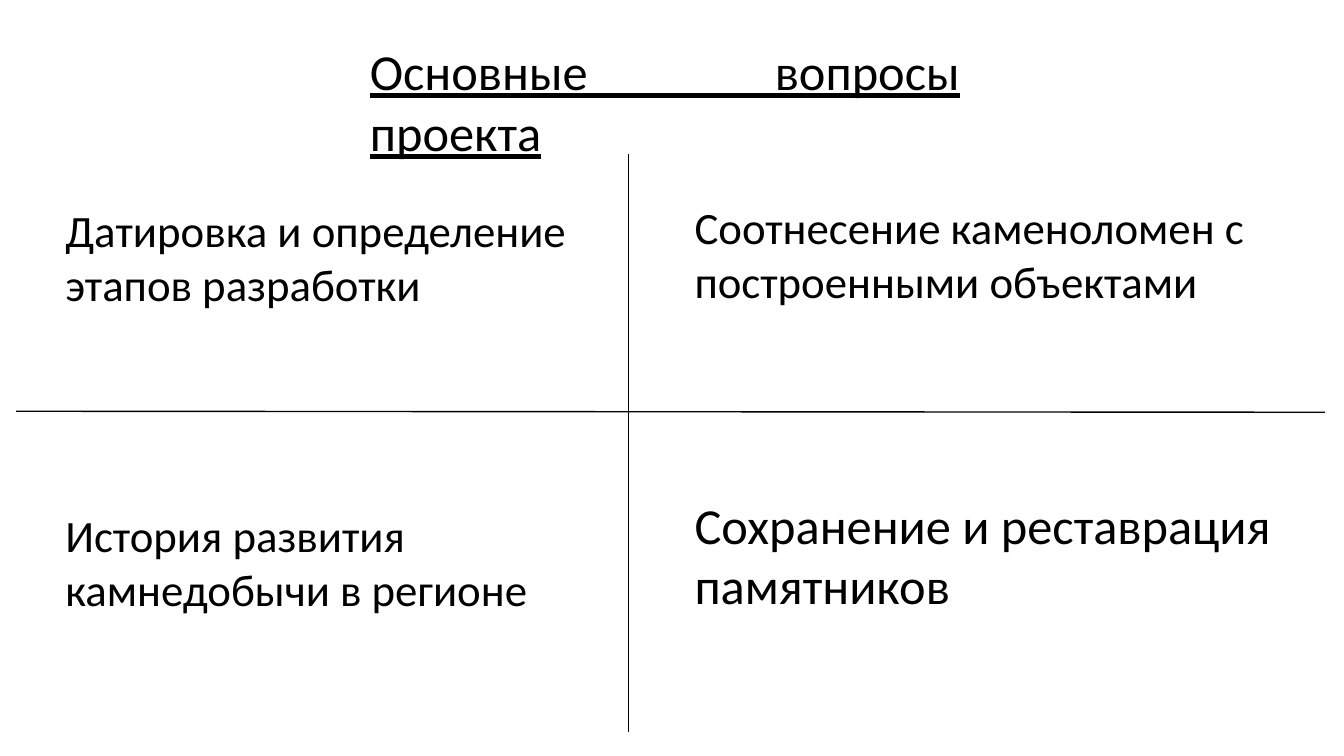
from dataclasses import dataclass

from lxml.etree import SubElement
from pptx import Presentation
from pptx.dml.color import RGBColor
from pptx.enum.shapes import MSO_CONNECTOR
from pptx.enum.text import MSO_AUTO_SIZE, PP_ALIGN
from pptx.oxml.ns import qn
from pptx.util import Inches, Pt


@dataclass(frozen=True)
class Theme:
    font: str = "Calibri"
    ink: RGBColor = RGBColor(0, 0, 0)
    large: int = 36
    normal: int = 32


theme = Theme()


def add_text(slide, text, left, top, width, height, size):
    box = slide.shapes.add_textbox(Inches(left), Inches(top), Inches(width), Inches(height))
    text_frame = box.text_frame
    text_frame.text = text
    text_frame.word_wrap = True
    text_frame.auto_size = MSO_AUTO_SIZE.SHAPE_TO_FIT_TEXT
    for paragraph in text_frame.paragraphs:
        for run in paragraph.runs:
            run.font.name = theme.font
            run.font.size = Pt(size)
            run.font.color.rgb = theme.ink
    return text_frame


presentation = Presentation()
presentation.slide_width = Inches(13.33)
presentation.slide_height = Inches(7.5)
slide = presentation.slides.add_slide(presentation.slide_layouts[6])

title = add_text(slide, "Основные вопросы проекта", 3.57, 0.35, 6.05, 0.71, theme.large)
title.paragraphs[0].alignment = PP_ALIGN.JUSTIFY
title.paragraphs[0].runs[0].font.underline = True

# Cross that divides the slide into four questions
dividers = [
    (6.23, 1.53, 6.23, 7.26, 0.5),
    (0.16, 4.08, 13.14, 4.09, 1),
]
for start_x, start_y, end_x, end_y, weight in dividers:
    divider = slide.shapes.add_connector(
        MSO_CONNECTOR.STRAIGHT,
        Inches(start_x), Inches(start_y), Inches(end_x), Inches(end_y),
    )
    divider.line.color.rgb = theme.ink
    divider.line.width = Pt(weight)
    SubElement(divider.element.spPr, qn("a:effectLst"))

left_column, right_column = 0.55, 6.79
questions = [
    ("Датировка и определение\nэтапов разработки", left_column, 1.96, 5.28, 1.18, theme.normal),
    ("Соотнесение каменоломен с построенными объектами", right_column, 1.93, 6.24, 1.18, theme.normal),
    ("История развития камнедобычи в регионе", left_column, 4.99, 5.23, 1.18, theme.normal),
    ("Сохранение и реставрация памятников", right_column, 4.85, 6.24, 1.31, theme.large),
]
for question in questions:
    add_text(slide, *question)

presentation.save("out.pptx")
